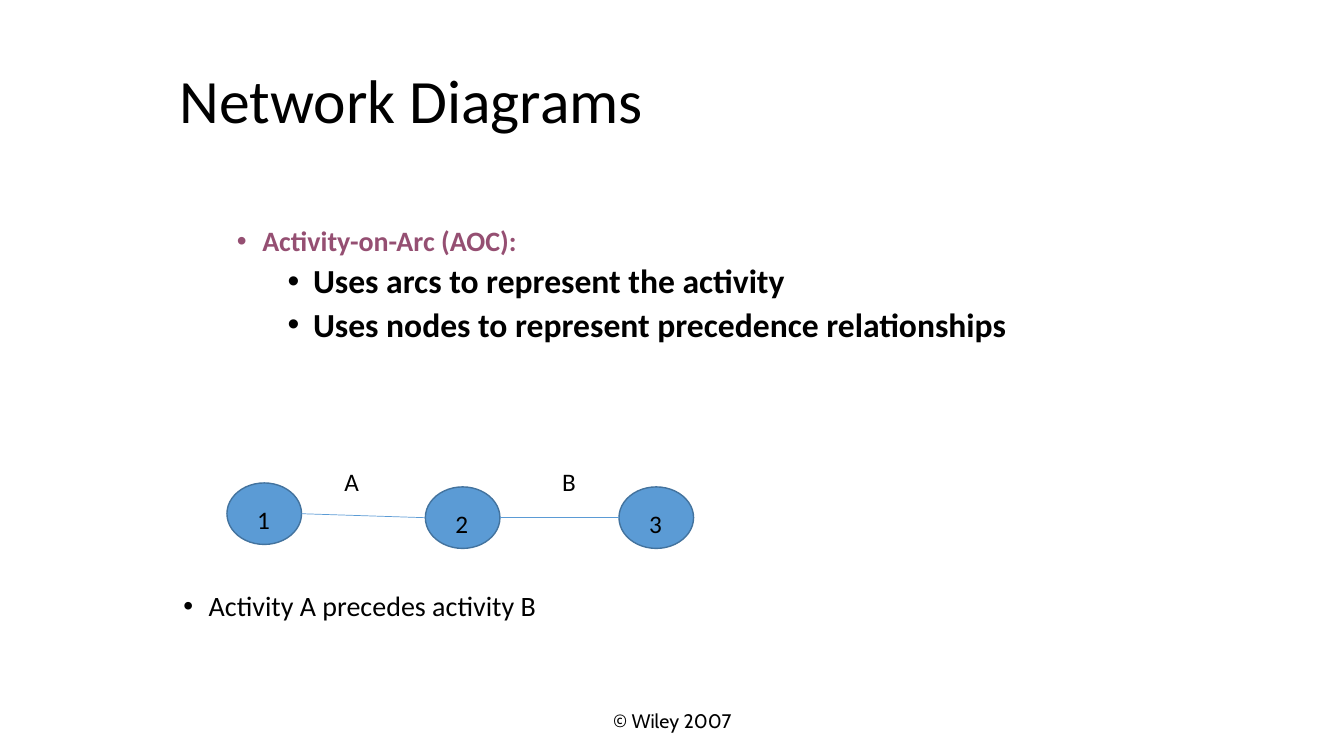
from dataclasses import dataclass

from lxml import etree
from pptx import Presentation
from pptx import util as u
from pptx.dml.color import RGBColor
from pptx.enum import shapes, text
from pptx.oxml import ns

Cm = u.Cm


@dataclass(frozen=True)
class Theme:
    font: str = "Calibri"
    footer_font: str = "Cabin"
    ink: str = "000000"
    accent: str = "954F72"
    node_fill: str = "5B9BD5"
    node_line: str = "43739E"
    title_size: int = 44
    detail_size: int = 24
    body_size: int = 20
    label_size: int = 18
    footer_size: int = 14


THEME = Theme()
NODE_WIDTH, NODE_HEIGHT = 1.88, 1.55
LABEL_WIDTH, LABEL_HEIGHT = 0.86, 1.02
LABEL_DROP = 0.41
BULLET_INDENT = 0.64


def colour(value):
    return RGBColor.from_string(value)


def add_bullet(para, margin):
    properties = para._p.get_or_add_pPr()
    properties.set("marL", str(Cm(margin)))
    properties.set("indent", str(-Cm(BULLET_INDENT)))
    bullet_font = etree.SubElement(properties, ns.qn("a:buFont"))
    bullet_font.set("typeface", "Arial")
    bullet = etree.SubElement(properties, ns.qn("a:buChar"))
    bullet.set("char", "•")


def write_para(para, words, size=THEME.label_size, font=THEME.font, ink=THEME.ink,
               bold=False, align=text.PP_ALIGN.LEFT, spacing=1.0, before=0,
               level=0, bullet_margin=None):
    if bullet_margin is not None:
        add_bullet(para, bullet_margin)
    para.level = level
    para.alignment = align
    para.line_spacing = spacing
    para.space_before = u.Pt(before)
    span = para.add_run()
    span.text = words
    span.font.name = font
    span.font.size = u.Pt(size)
    span.font.bold = bold
    span.font.color.rgb = colour(ink)


def add_box(page, left, top, width, height, anchor=text.MSO_ANCHOR.TOP, wrap=True):
    box = page.shapes.add_textbox(Cm(left), Cm(top), Cm(width), Cm(height))
    box.text_frame.word_wrap = wrap
    box.text_frame.vertical_anchor = anchor
    return box.text_frame


def add_title(page, words):
    title = page.shapes.title
    title.left, title.top = Cm(4.27), Cm(0.58)
    title.width, title.height = Cm(28.85), Cm(4.06)
    title.text_frame.vertical_anchor = text.MSO_ANCHOR.MIDDLE
    write_para(title.text_frame.paragraphs[0], words, size=THEME.title_size, spacing=0.9)


def add_definition(page, heading, details):
    frame = add_box(page, 5.72, 5.61, 23.39, 5.51)
    write_para(frame.paragraphs[0], heading, size=THEME.body_size, ink=THEME.accent,
               bold=True, spacing=0.9, bullet_margin=BULLET_INDENT)
    for detail in details:
        write_para(frame.add_paragraph(), detail, size=THEME.detail_size, bold=True,
                   spacing=0.9, before=5, level=1, bullet_margin=3 * BULLET_INDENT)


def add_label(page, words, left, top):
    frame = add_box(page, left, top, LABEL_WIDTH, LABEL_HEIGHT, wrap=False)
    write_para(frame.paragraphs[0], words)


def add_node(page, words, left, top):
    node = page.shapes.add_shape(shapes.MSO_SHAPE.OVAL, Cm(left), Cm(top),
                                 Cm(NODE_WIDTH), Cm(NODE_HEIGHT))
    node.shadow.inherit = False
    node.fill.solid()
    node.fill.fore_color.rgb = colour(THEME.node_fill)
    node.line.color.rgb = colour(THEME.node_line)
    node.line.width = u.Pt(1)
    add_label(page, words, left + (NODE_WIDTH - LABEL_WIDTH) / 2, top + LABEL_DROP)


def add_arc(page, start, end):
    arc = page.shapes.add_connector(shapes.MSO_CONNECTOR.STRAIGHT,
                                    *(Cm(length) for length in start + end))
    arc.line.color.rgb = colour(THEME.node_fill)
    arc.line.width = u.Pt(0.5)
    etree.SubElement(arc._element.spPr, ns.qn("a:effectLst"))


def add_network(page):
    nodes = [("1", 5.72, 12.17), ("2", 10.72, 12.27), ("3", 15.6, 12.27)]
    for words, left, top in nodes:
        add_node(page, words, left, top)
    for (_, left, top), (_, next_left, next_top) in zip(nodes, nodes[1:]):
        add_arc(page, (left + NODE_WIDTH, top + NODE_HEIGHT / 2),
                (next_left, next_top + NODE_HEIGHT / 2))
    for words, left in (("A", 8.43), ("B", 13.92)):
        add_label(page, words, left, 11.63)


def main():
    deck = Presentation()
    deck.slide_width, deck.slide_height = Cm(33.87), Cm(19.05)
    page = deck.slides.add_slide(deck.slide_layouts.get_by_name("Title Only"))
    add_title(page, "Network Diagrams")
    add_definition(page, "Activity-on-Arc (AOC):",
                   ["Uses arcs to represent the activity",
                    "Uses nodes to represent precedence relationships"])
    add_network(page)
    conclusion = add_box(page, 4.37, 14.8, 18.77, 2.24)
    write_para(conclusion.paragraphs[0], "Activity A precedes activity B",
               size=THEME.body_size, spacing=0.9, bullet_margin=BULLET_INDENT)
    footer = add_box(page, 11.23, 17.65, 11.43, 1.02, anchor=text.MSO_ANCHOR.MIDDLE)
    write_para(footer.paragraphs[0], "© Wiley 2007", size=THEME.footer_size,
               font=THEME.footer_font, align=text.PP_ALIGN.CENTER)
    deck.save("out.pptx")


if __name__ == "__main__":
    main()
